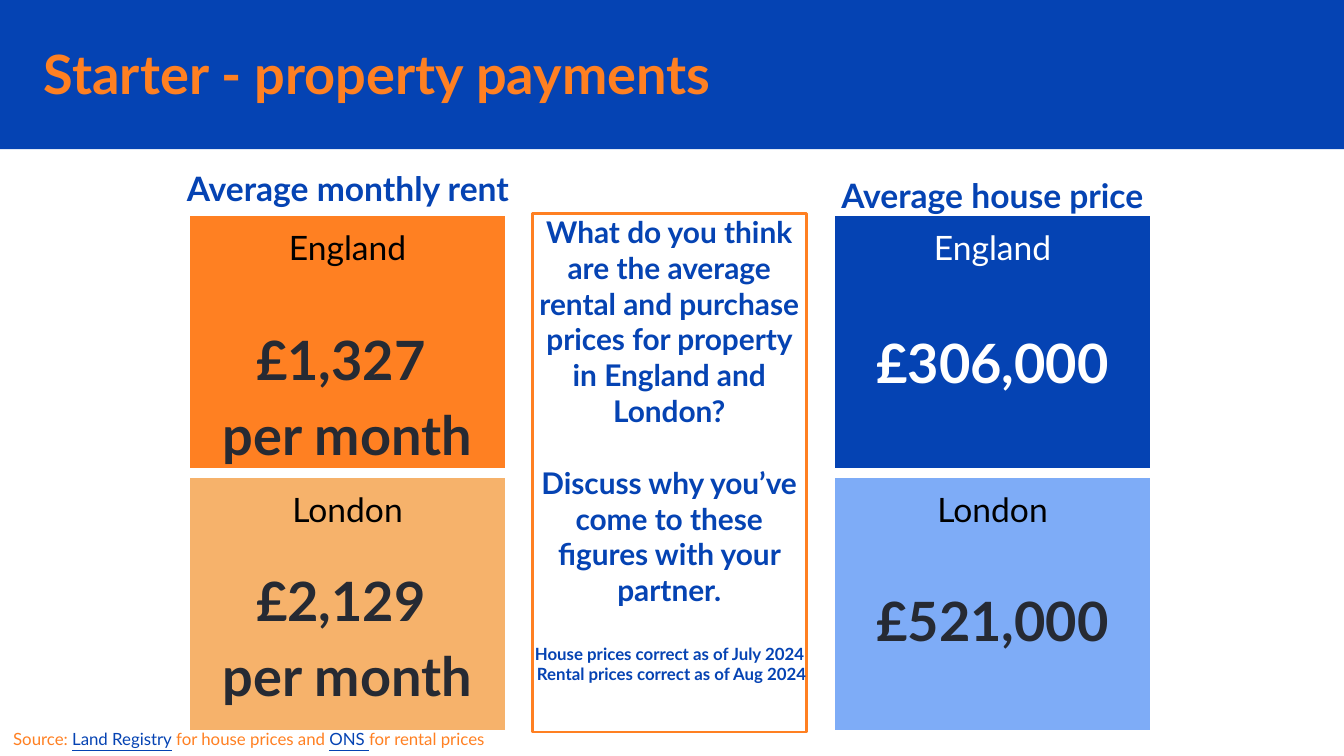
import pptx
import pptx.dml.color
import pptx.enum.shapes
import pptx.enum.text
import pptx.util
from pptx.util import Cm

COLOURS = {
    "blue": "0543B3",
    "orange": "FF8022",
    "light_orange": "F6B26B",
    "light_blue": "7EACF7",
    "ink": "262A33",
    "black": "000000",
    "white": "FFFFFF",
}
FONT = "Lato"
CENTER = pptx.enum.text.PP_ALIGN.CENTER
LEFT = pptx.enum.text.PP_ALIGN.LEFT
TOP = pptx.enum.text.MSO_ANCHOR.TOP
MIDDLE = pptx.enum.text.MSO_ANCHOR.MIDDLE


def colour(name):
    return pptx.dml.color.RGBColor.from_string(COLOURS[name])


def prepare_frame(shape, inset=0, anchor=TOP):
    frame = shape.text_frame
    frame.word_wrap = True
    frame.vertical_anchor = anchor
    frame.margin_left = frame.margin_right = Cm(inset)
    frame.margin_top = frame.margin_bottom = Cm(inset)
    return frame


def add_paragraph(frame, first, align=CENTER, spacing=None, before=0):
    paragraph = frame.paragraphs[0] if first else frame.add_paragraph()
    paragraph.alignment = align
    if spacing:
        paragraph.line_spacing = spacing
    if before:
        paragraph.space_before = pptx.util.Pt(before)
    return paragraph


def add_run(paragraph, text, size, color, bold=False, underline=None):
    run = paragraph.add_run()
    run.text = text
    run.font.name = FONT
    run.font.size = pptx.util.Pt(size)
    run.font.bold = bold
    run.font.underline = underline
    run.font.color.rgb = colour(color)


def add_rectangle(slide, box, fill=None, line=None, width=0):
    shape = slide.shapes.add_shape(
        pptx.enum.shapes.MSO_SHAPE.RECTANGLE, *map(Cm, box))
    shape.shadow.inherit = False
    if fill:
        shape.fill.solid()
        shape.fill.fore_color.rgb = colour(fill)
    else:
        shape.fill.background()
    if line:
        shape.line.color.rgb = colour(line)
        shape.line.width = pptx.util.Pt(width)
    else:
        shape.line.fill.background()
    return shape


def add_text(slide, box, lines, size, color):
    frame = prepare_frame(slide.shapes.add_textbox(*map(Cm, box)))
    for index, line in enumerate(lines):
        paragraph = add_paragraph(frame, index == 0, spacing=1.15)
        add_run(paragraph, line, size, color, bold=True)


def add_header(slide, box, title):
    left, top, width, height = box
    add_rectangle(slide, box, "blue")
    title_box = slide.shapes.add_textbox(
        Cm(left + 0.58), Cm(top + 0.66), Cm(15.85), Cm(1.42))
    frame = prepare_frame(title_box, 0.25, MIDDLE)
    add_run(add_paragraph(frame, True, LEFT), title, 29, "orange", bold=True)


def add_prompt(slide, box):
    frame = prepare_frame(add_rectangle(slide, box, line="orange", width=1.5))
    lines = [
        ("What do you think are the average rental and purchase prices "
         "for property in England and London?", 16, 0),
        ("Discuss why you’ve come to these figures with your partner.",
         16, 19.2),
        ("House prices correct as of July 2024", 9, 19.2),
        (" Rental prices correct as of Aug 2024", 9, 0),
    ]
    for index, (text, size, before) in enumerate(lines):
        paragraph = add_paragraph(frame, index == 0, before=before)
        add_run(paragraph, text, size, "blue", bold=True)


def add_card(slide, box, place, fill, place_color, price, price_color, drop):
    left, top, width, height = box
    card = add_rectangle(slide, box, fill, "white", 2.25)
    frame = prepare_frame(card, 0.25)
    add_run(add_paragraph(frame, True), place, 18, place_color)
    price_box = (left + 0.5, top + drop, width - 1, 1.75)
    add_text(slide, price_box, price, 29, price_color)


def add_price_column(slide, box, cards):
    left, top, width, height = box
    gap = 0.1
    card_height = (height - gap) / 2
    for index, card in enumerate(cards):
        card_top = top + index * (card_height + gap)
        add_card(slide, (left, card_top, width, card_height), *card)


def add_source(slide, box):
    frame = prepare_frame(slide.shapes.add_textbox(*map(Cm, box)), 0.25)
    paragraph = add_paragraph(frame, True, LEFT)
    for text, linked in [
        ("Source: ", False),
        ("Land Registry", True),
        (" for house prices and ", False),
        ("ONS ", True),
        ("for rental prices", False),
    ]:
        add_run(paragraph, text, 9, "blue" if linked else "orange",
                underline=linked)


def main():
    presentation = pptx.Presentation()
    presentation.slide_width = Cm(25.4)
    presentation.slide_height = Cm(14.29)
    slide = presentation.slides.add_slide(presentation.slide_layouts[6])

    add_header(slide, (0, 0, 25.4, 2.82), "Starter - property payments")
    add_text(slide, (3.07, 3.07, 7.01, 1.75),
             ["Average monthly rent"], 18, "blue")
    add_prompt(slide, (10.06, 4.04, 5.18, 9.8))
    add_price_column(slide, (3.56, 4.04, 6.02, 9.8), [
        ("England", "orange", "black", ["£1,327 ", "per month"], "ink", 1.95),
        ("London", "light_orange", "black", ["£2,129 ", "per month"],
         "ink", 1.55),
    ])
    add_price_column(slide, (15.75, 4.04, 6.02, 9.8), [
        ("England", "blue", "white", ["£306,000"], "white", 2),
        ("London", "light_blue", "black", ["£521,000"], "ink", 1.93),
    ])
    add_text(slide, (15.01, 3.2, 7.49, 1.75),
             ["Average house price"], 18, "blue")
    add_source(slide, (0, 13.59, 15.09, 0.89))

    presentation.save("out.pptx")


if __name__ == "__main__":
    main()
